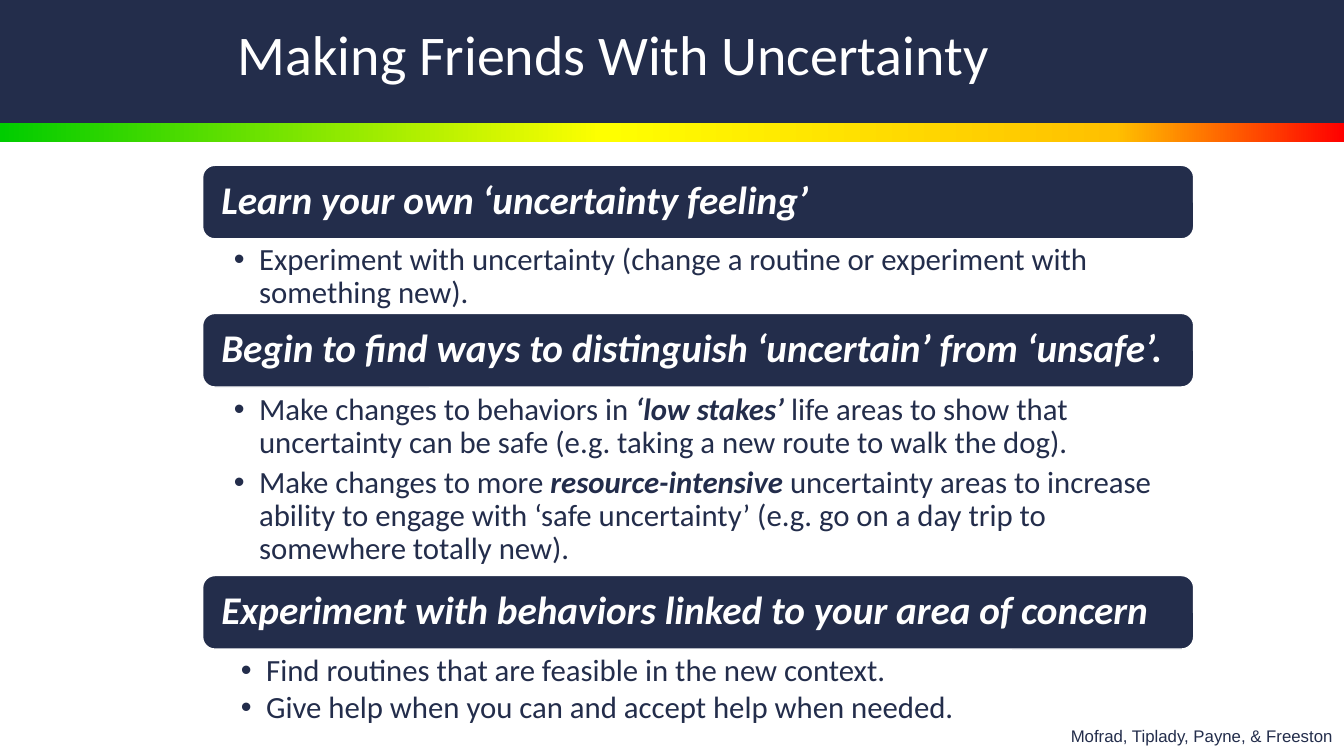
from dataclasses import dataclass

from lxml import etree
from pptx import Presentation
from pptx.dml.color import RGBColor
from pptx.enum import shapes, text
from pptx.oxml import ns
from pptx.util import Inches, Pt


@dataclass(frozen=True)
class Theme:
    navy: RGBColor = RGBColor(0x23, 0x2D, 0x4B)
    white: RGBColor = RGBColor(0xFF, 0xFF, 0xFF)
    ramp: tuple = ((0, "00CC00"), (45, "FFFF00"), (83, "FFC000"), (100, "FF0000"))
    face: str = "Calibri"
    plain: str = "Arial"
    title: int = 40
    head: int = 28
    body: int = 22
    small: int = 12


THEME = Theme()
LEFT, WIDTH, BAR = 2.01, 9.83, 0.73

HEADS = [
    (1.64, "Learn your own ‘uncertainty feeling’"),
    (3.11, "Begin to find ways to distinguish ‘uncertain’ from ‘unsafe’."),
    (5.71, "Experiment with behaviors linked to your area of concern"),
]
FEEL = [
    [("Experiment with uncertainty (change a routine or experiment with something new).", False)],
]
WAYS = [
    [("Make changes to behaviors in ", False),
     ("‘low stakes’ ", True),
     ("life areas to show that uncertainty can be safe "
      "(e.g. taking a new route to walk the dog).", False)],
    [("Make changes to more ", False),
     ("resource-intensive", True),
     (" uncertainty areas to increase ability to engage with ‘safe uncertainty’ "
      "(e.g. go on a day trip to somewhere totally new).", False)],
]
TRIALS = [
    [("Find routines that are feasible in the new context.", False)],
    [("Give help when you can and accept help when needed.", False)],
]


def place(shape, left, top, width, height):
    shape.left, shape.top = Inches(left), Inches(top)
    shape.width, shape.height = Inches(width), Inches(height)


def frame(shape, anchor, pads=(0.1, 0.05, 0.1, 0.05)):
    box = shape.text_frame
    box.auto_size = text.MSO_AUTO_SIZE.NONE
    box.word_wrap = True
    box.vertical_anchor = anchor
    (box.margin_left, box.margin_top,
     box.margin_right, box.margin_bottom) = map(Inches, pads)
    return box


def style(para, size, color, face=THEME.face, bold=False, lead=1.0, after=0):
    para.alignment = text.PP_ALIGN.LEFT
    para.line_spacing = lead
    para.space_before, para.space_after = Pt(0), Pt(after)
    font = para.font
    font.name, font.size, font.color.rgb = face, Pt(size), color
    font.bold = font.italic = bold


def indent(para, left, hang, mark=True):
    props = para._p.get_or_add_pPr()
    props.set("marL", str(Inches(left)))
    props.set("indent", str(Inches(-hang)))
    if mark:
        etree.SubElement(props, ns.qn("a:buFont"), typeface=THEME.plain)
        etree.SubElement(props, ns.qn("a:buChar"), char="•")
    else:
        etree.SubElement(props, ns.qn("a:buNone"))


def add_band(slide, top, height):
    band = slide.shapes.add_shape(
        shapes.MSO_SHAPE.RECTANGLE, 0, Inches(top), Inches(13.33), Inches(height))
    band.shadow.inherit = False
    band.line.fill.background()
    slide.shapes._spTree.insert(2, band._element)
    return band


def add_ramp(band):
    band.fill.gradient()
    band.fill.gradient_angle = 0
    stops = band._element.spPr.find(".//" + ns.qn("a:gsLst"))
    for stop in list(stops):
        stops.remove(stop)
    for spot, color in THEME.ramp:
        stop = etree.SubElement(stops, ns.qn("a:gs"), pos=str(spot * 1000))
        etree.SubElement(stop, ns.qn("a:srgbClr"), val=color)


def add_head(slide, top, words):
    bar = slide.shapes.add_shape(
        shapes.MSO_SHAPE.ROUNDED_RECTANGLE,
        Inches(LEFT), Inches(top), Inches(WIDTH), Inches(BAR))
    bar.shadow.inherit = False
    bar.fill.solid()
    bar.fill.fore_color.rgb = THEME.navy
    bar.line.color.rgb = THEME.white
    bar.line.width = Pt(1)
    para = frame(bar, text.MSO_ANCHOR.MIDDLE, (0.15, 0.12, 0.15, 0.12)).paragraphs[0]
    para.text = words
    style(para, THEME.head, THEME.white, bold=True, lead=0.9)


def fill_list(shape, area, items, pads, left, lead, after):
    place(shape, *area)
    box = frame(shape, text.MSO_ANCHOR.TOP, pads)
    for i, item in enumerate(items):
        para = box.add_paragraph() if i else box.paragraphs[0]
        indent(para, left, 0.25)
        style(para, THEME.body, THEME.navy, lead=lead, after=after)
        for words, strong in item:
            run = para.add_run()
            run.text = words
            if strong:
                run.font.bold = run.font.italic = True


def fill_title(shape, words):
    place(shape, 2.26, 0.02, 9.24, 1.1)
    para = frame(shape, text.MSO_ANCHOR.MIDDLE).paragraphs[0]
    para.text = words
    style(para, THEME.title, THEME.white, lead=0.9)


def fill_credit(shape, words):
    place(shape, 10.52, 7.15, 2.81, 0.3)
    box = frame(shape, text.MSO_ANCHOR.TOP)
    box.word_wrap = False
    para = box.paragraphs[0]
    indent(para, 0, 0, mark=False)
    para.text = words
    style(para, THEME.small, THEME.navy, THEME.plain)


def main():
    deck = Presentation()
    deck.slide_width, deck.slide_height = Inches(13.33), Inches(7.5)
    slide = deck.slides.add_slide(deck.slide_layouts.get_by_name("Comparison"))
    title, first, second, credit, third = slide.placeholders

    band = add_band(slide, 0, 1.22)
    band.fill.solid()
    band.fill.fore_color.rgb = THEME.navy
    add_ramp(add_band(slide, 1.22, 0.19))

    fill_title(title, "Making Friends With Uncertainty")
    for top, words in HEADS:
        add_head(slide, top, words)
    pads = (0.31, 0.04, 0.22, 0.04)
    fill_list(first, (LEFT, 2.38, WIDTH, 0.76), FEEL, pads, 0.25, 0.9, 4.4)
    fill_list(second, (LEFT, 3.87, WIDTH, 1.84), WAYS, pads, 0.25, 0.9, 4.4)
    fill_list(third, (1.67, 6.41, 8.83, 0.84), TRIALS, (0.1, 0.05, 0.1, 0.05), 0.87, 1.0, 0)
    fill_credit(credit, "Mofrad, Tiplady, Payne, & Freeston")
    deck.save("out.pptx")


if __name__ == "__main__":
    main()
